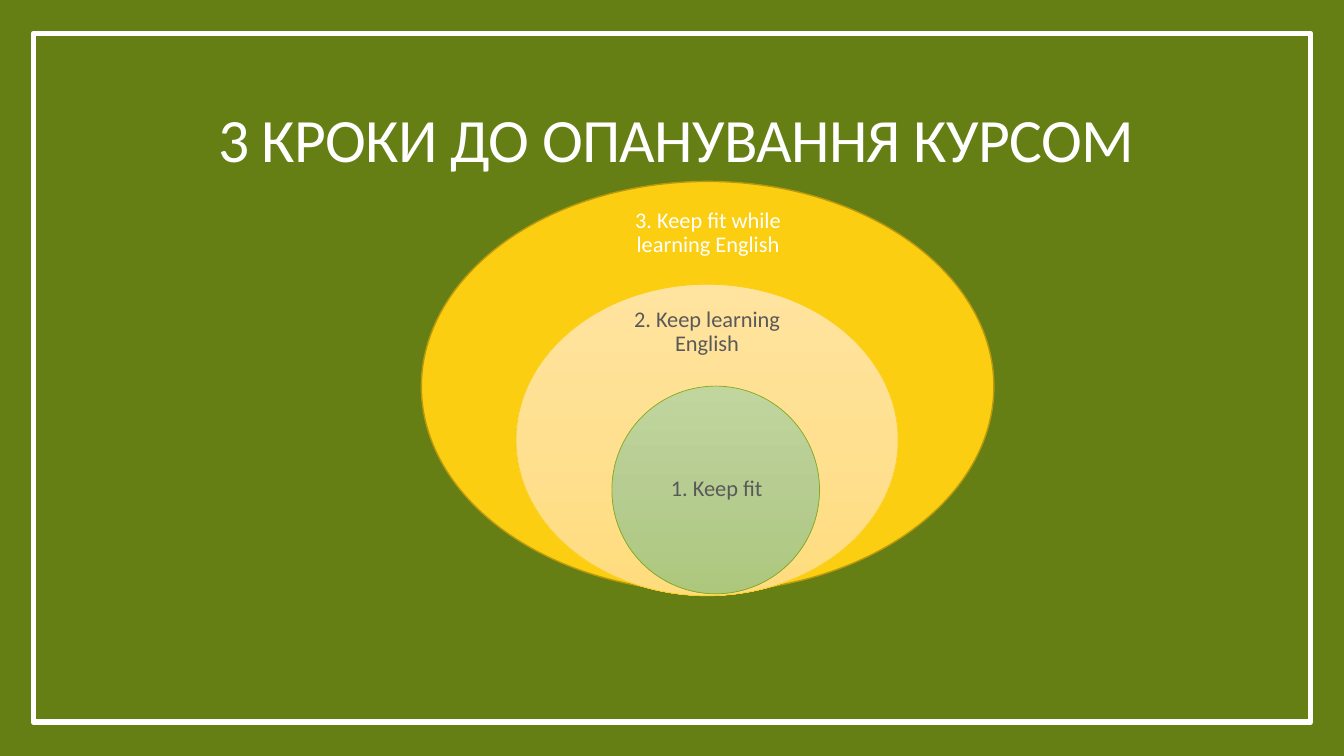
from copy import deepcopy

from pptx import Presentation
from pptx import util as u
from pptx.dml.color import RGBColor
from pptx.enum import shapes, text

WIDTH, HEIGHT = u.Inches(13.333), u.Inches(7.5)
FONT = "Calibri"
OLIVE = RGBColor(0x65, 0x7F, 0x14)
WHITE = RGBColor(0xFF, 0xFF, 0xFF)
GREY = RGBColor(0x59, 0x59, 0x59)
GOLD = RGBColor(0xFB, 0xCE, 0x11)
BRONZE = RGBColor(0xBA, 0x98, 0x0D)
LEAF = RGBColor(0x87, 0xA9, 0x1B)
CREAM = [RGBColor(0xFF, 0xE4, 0x9F), RGBColor(0xFF, 0xE0, 0x91), RGBColor(0xFF, 0xDC, 0x7D)]
SAGE = [RGBColor(0xC1, 0xD6, 0x9E), RGBColor(0xB6, 0xCC, 0x91), RGBColor(0xAD, 0xC8, 0x7D)]

# Each step: oval area, fill colours, outline, outline points,
# label area, side inset in inches, text colour, wording
STEPS = [
    ((31.35, 24, 42.6, 54.27), [GOLD], BRONZE, 1,
     (45.22, 26.8, 14.92, 8.13), 0.2, WHITE, "3. Keep fit while learning English"),
    ((38.4, 37.6, 28.43, 41.2), CREAM, GOLD, 0.5,
     (45.97, 40.13, 13.28, 7.73), 0.12, GREY, "2. Keep learning English"),
    ((45.53, 51.07, 15.45, 27.47), SAGE, LEAF, 0.5,
     (47.85, 57.87, 10.95, 13.73), 0.12, GREY, "1. Keep fit"),
]


def area(left, top, width, height):
    """Turn percentages of the slide into lengths."""
    return [int(share * side / 100) for share, side in
            zip((left, top, width, height), (WIDTH, HEIGHT, WIDTH, HEIGHT))]


def format_text(frame, wording, size, color, anchor):
    frame.word_wrap = True
    frame.auto_size = text.MSO_AUTO_SIZE.NONE
    frame.vertical_anchor = anchor
    frame.text = wording
    para = frame.paragraphs[0]
    para.alignment = text.PP_ALIGN.CENTER
    para.line_spacing = 0.9
    para.font.name = FONT
    para.font.size = u.Pt(size)
    para.font.color.rgb = color
    return para


def add_title(page, wording):
    title = page.shapes.title
    title.left, title.top, title.width, title.height = area(7.57, 9.47, 85.5, 14.4)
    para = format_text(title.text_frame, wording, 44, WHITE, text.MSO_ANCHOR.BOTTOM)
    para.runs[0].font._element.set("spc", "-50")


def add_outlined(page, kind, place, color, points):
    shape = page.shapes.add_shape(kind, *area(*place))
    shape.shadow.inherit = False
    shape.line.color.rgb = color
    shape.line.width = u.Pt(points)
    return shape


def fill_downwards(shape, colors):
    """Fill with three evenly spaced colours from top to bottom."""
    shape.fill.gradient()
    shape.fill.gradient_angle = 270
    stop_list = shape._element.xpath(".//a:gsLst")[0]
    stop_list.insert(1, deepcopy(stop_list[0]))
    for index, (stop, color) in enumerate(zip(shape.fill.gradient_stops, colors)):
        stop.position = index / 2
        stop.color.rgb = color


def add_step(page, place, colors, outline, points, label_place, inset, color, wording):
    oval = add_outlined(page, shapes.MSO_SHAPE.OVAL, place, outline, points)
    if len(colors) == 1:
        oval.fill.solid()
        oval.fill.fore_color.rgb = colors[0]
    else:
        fill_downwards(oval, colors)
    frame = page.shapes.add_textbox(*area(*label_place)).text_frame
    frame.margin_left = frame.margin_right = u.Inches(inset)
    frame.margin_top = frame.margin_bottom = u.Inches(0.12)
    format_text(frame, wording, 16, color, text.MSO_ANCHOR.MIDDLE)


def main():
    deck = Presentation()
    deck.slide_width, deck.slide_height = WIDTH, HEIGHT
    page = deck.slides.add_slide(deck.slide_layouts.get_by_name("Title Only"))
    page.background.fill.solid()
    page.background.fill.fore_color.rgb = OLIVE
    border = add_outlined(page, shapes.MSO_SHAPE.RECTANGLE, (2.5, 4.44, 95, 91.11), WHITE, 4)
    border.fill.background()
    add_title(page, "3 КРОКИ ДО ОПАНУВАННЯ КУРСОМ")
    for step in STEPS:
        add_step(page, *step)
    deck.save("out.pptx")


if __name__ == "__main__":
    main()
